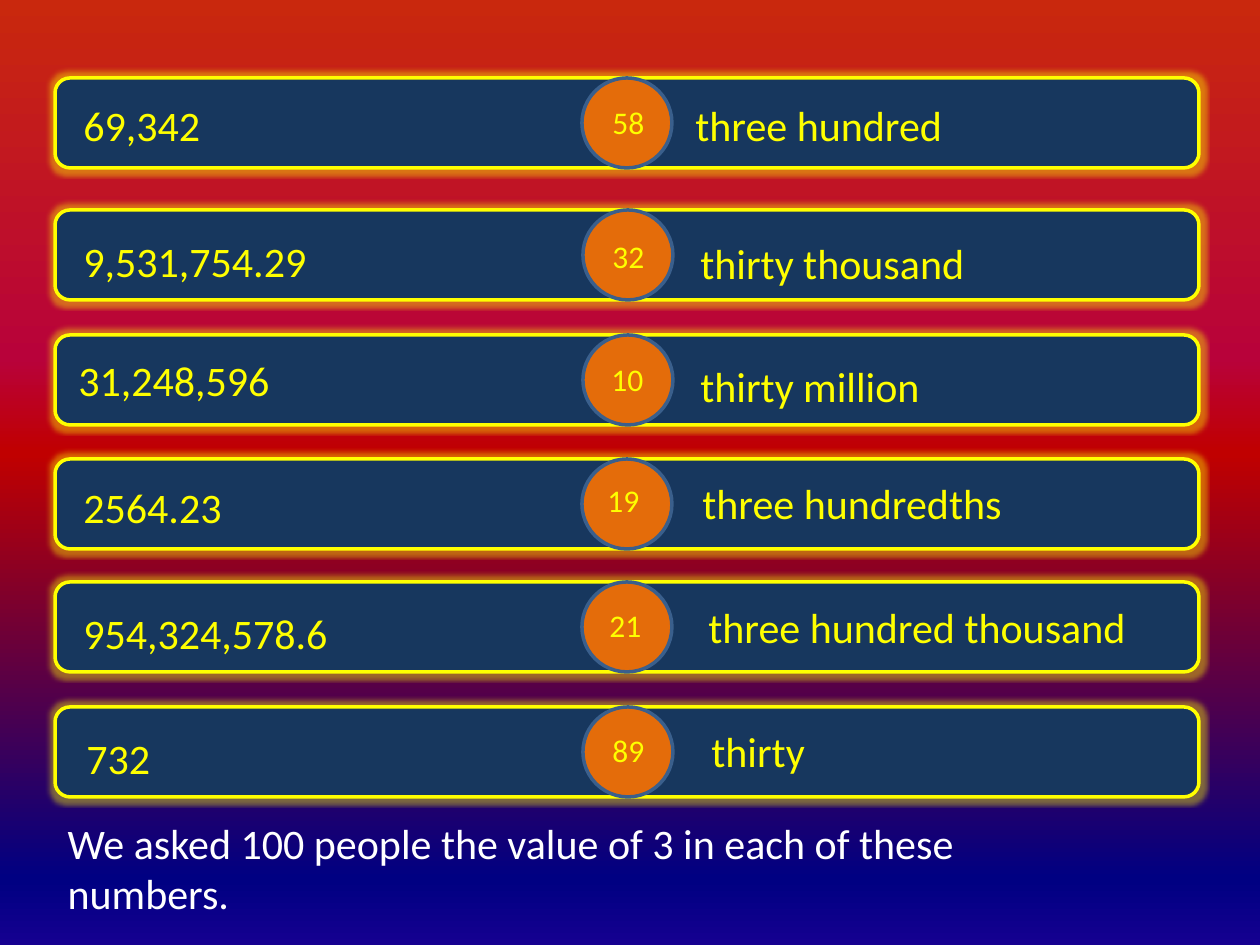
import pptx
import pptx.util
import pptx.dml.color
import pptx.enum.shapes
import pptx.enum.text
import pptx.oxml.ns
import lxml.etree

PX = 914400 // 126
HUES = {
    "bar": "17375E",
    "ball": "E46C0A",
    "rim": "3A5F8C",
    "glow": "FFFF00",
    "white": "FFFFFF",
}
# Background stops: percent, colour
STOPS = [(0, "C9280D"), (38, "B8023A"), (48, "C00000"),
         (93, "000082"), (100, "150090")]

BAR_X, BAR_W, SIZE = 55, 1144, 90
# Each row: top, ball left, then (text, left, top) of number, count, answer
ROWS = [
    (78, 582, ("69,342", 71, 93), ("58", 600, 97),
     ("three hundred", 683, 93)),
    (210, 583, ("9,531,754.29", 71, 229), ("32", 600, 231),
     ("thirty thousand", 688, 231)),
    (335, 583, ("31,248,596", 66, 348), ("10", 599, 354),
     ("thirty million", 688, 354)),
    (459, 582, ("2564.23", 71, 475), ("19", 595, 475),
     ("three hundredths", 690, 471)),
    (582, 582, ("954,324,578.6", 71, 601), ("21", 597, 600),
     ("three hundred thousand", 696, 595)),
    (707, 583, ("732", 74, 726), ("89", 600, 725),
     ("thirty", 699, 719)),
]


def scale(*nums):
    return [pptx.util.Emu(n * PX) for n in nums]


def tint(name):
    return pptx.dml.color.RGBColor.from_string(HUES[name])


def add_tag(root, name, **attrs):
    tag = pptx.oxml.ns.qn("a:" + name)
    return lxml.etree.SubElement(root, tag, attrs)


def paint_back(slide):
    fill = slide.background.fill
    fill.gradient()
    fill.gradient_angle = 270
    stops = slide.element.find(".//" + pptx.oxml.ns.qn("a:gsLst"))
    for old in list(stops):
        stops.remove(old)
    for part, hue in STOPS:
        stop = add_tag(stops, "gs", pos=str(part * 1000))
        add_tag(stop, "srgbClr", val=hue)


def add_form(slide, kind, box, fill, line):
    form = slide.shapes.add_shape(kind, *scale(*box))
    form.shadow.inherit = False
    form.fill.solid()
    form.fill.fore_color.rgb = tint(fill)
    form.line.color.rgb = tint(line)
    form.line.width = pptx.util.Pt(2)
    return form


def add_glow(form):
    root = form.element.spPr.find(pptx.oxml.ns.qn("a:effectLst"))
    glow = add_tag(root, "glow", rad=str(pptx.util.Pt(5)))
    hue = add_tag(glow, "srgbClr", val=HUES["glow"])
    add_tag(hue, "alpha", val="40000")


def write(frame, text, size, hue):
    frame.word_wrap = True
    frame.auto_size = pptx.enum.text.MSO_AUTO_SIZE.NONE
    frame.vertical_anchor = pptx.enum.text.MSO_ANCHOR.TOP
    para = frame.paragraphs[0]
    para.alignment = pptx.enum.text.PP_ALIGN.LEFT
    run = para.add_run()
    run.text = text
    run.font.name = "Calibri"
    run.font.size = pptx.util.Pt(size)
    run.font.color.rgb = tint(hue)


def add_text(slide, item, wide, high, size):
    text, left, top = item
    box = slide.shapes.add_textbox(*scale(left, top, wide, high))
    write(box.text_frame, text, size, "glow")


def set_title(slide, text, box):
    title = slide.shapes.title
    title.left, title.top, title.width, title.height = scale(*box)
    write(title.text_frame, text, 24, "white")


def main():
    deck = pptx.Presentation()
    deck.slide_width = pptx.util.Inches(10)
    deck.slide_height = pptx.util.Inches(7.5)
    slide = deck.slides.add_slide(deck.slide_layouts[5])
    paint_back(slide)

    # Answer board
    kinds = pptx.enum.shapes.MSO_SHAPE
    for top, ball_x, number, count, answer in ROWS:
        bar = add_form(slide, kinds.ROUNDED_RECTANGLE,
                       (BAR_X, top, BAR_W, SIZE), "bar", "glow")
        add_glow(bar)
        add_form(slide, kinds.OVAL, (ball_x, top, SIZE, SIZE), "ball", "rim")
        add_text(slide, number, 460, 63, 24)
        add_text(slide, count, 59, 50, 18)
        add_text(slide, answer, 461, 63, 24)

    # Survey question
    set_title(slide, "We asked 100 people the value of 3 in each of these numbers.",
              (55, 811, 1052, 115))
    deck.save("out.pptx")


if __name__ == "__main__":
    main()
